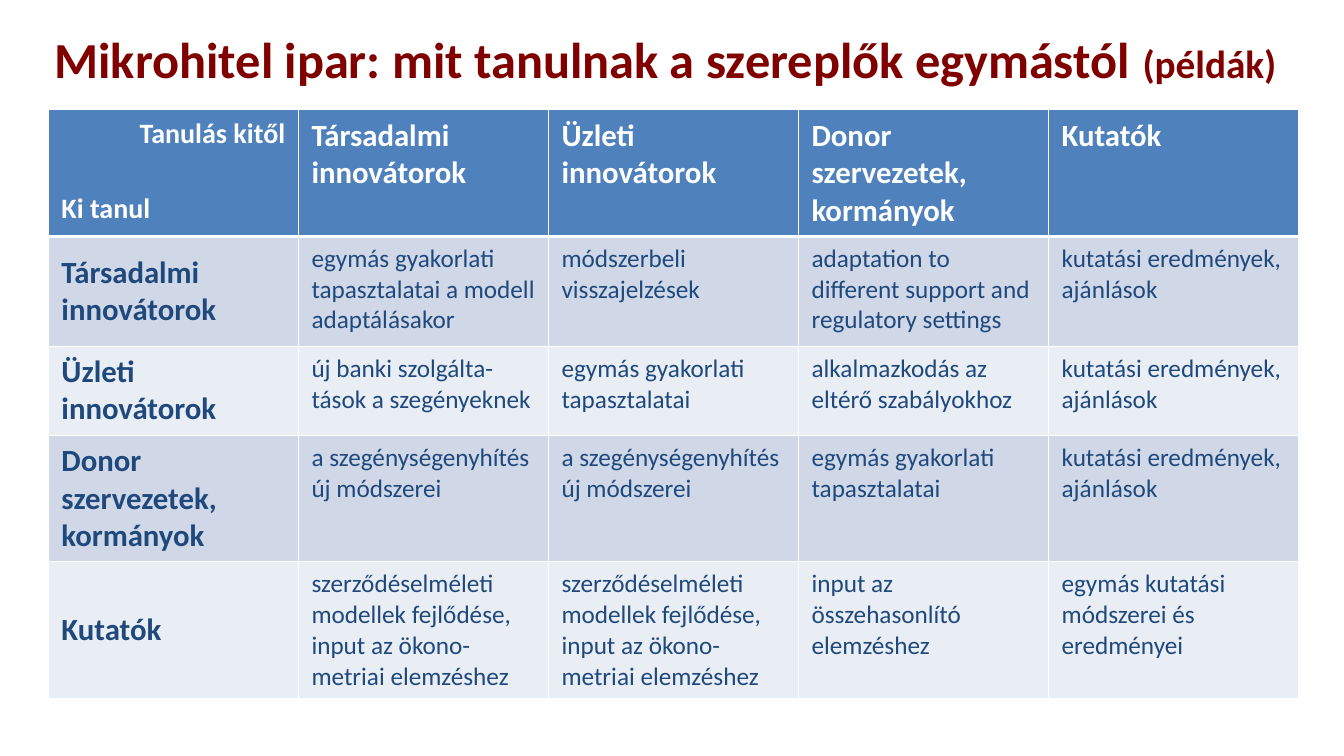
from dataclasses import dataclass

from pptx import Presentation
from pptx.dml.color import RGBColor
from pptx.enum.text import MSO_ANCHOR as Anchor, MSO_AUTO_SIZE as AutoSize, PP_ALIGN as Align
from pptx.oxml.ns import qn
from pptx.util import Inches, Pt
from lxml.etree import SubElement


@dataclass(frozen=True)
class Theme:
    font: str = "Calibri"
    title: str = "800000"
    header: str = "4F81BD"
    bands: tuple[str, str] = ("D0D8E8", "E9EDF4")
    text: str = "1F497D"
    white: str = "FFFFFF"
    title_size: int = 36
    note_size: int = 28
    heading_size: int = 22
    corner_size: int = 20
    body_size: int = 18


@dataclass(frozen=True)
class Learner:
    name: str
    height: float
    lessons: tuple[str, str, str, str]


THEME = Theme()
TABLE_LEFT, TABLE_TOP = 0.48, 1.09
COL_WIDTH, HEADER_HEIGHT = 2.48, 1.23
RESULTS = "kutatási eredmények, ajánlások"
PRACTICE = "egymás gyakorlati tapasztalatai"
POVERTY = "a szegénységenyhítés új módszerei"
THEORY = "szerződéselméleti modellek fejlődése, input az ökono-metriai elemzéshez"
LEARNERS = [
    Learner("Társadalmi innovátorok", 1.09, (
        "egymás gyakorlati tapasztalatai a modell adaptálásakor",
        "módszerbeli visszajelzések",
        "adaptation to different support and regulatory settings",
        RESULTS)),
    Learner("Üzleti innovátorok", 0.88, (
        "új banki szolgálta-tások a szegényeknek",
        PRACTICE, "alkalmazkodás az eltérő szabályokhoz", RESULTS)),
    Learner("Donor szervezetek, kormányok", 1.24, (POVERTY, POVERTY, PRACTICE, RESULTS)),
    Learner("Kutatók", 1.33, (
        THEORY, THEORY, "input az összehasonlító elemzéshez",
        "egymás kutatási módszerei és eredményei")),
]


def add_text(p, text: str, *, size: int, color: str, bold: bool = False,
             align: Align = Align.LEFT) -> None:
    p.alignment = align
    r = p.add_run()
    r.text = text
    r.font.name = THEME.font
    r.font.size = Pt(size)
    r.font.bold = bold
    r.font.color.rgb = RGBColor.from_string(color)


def set_borders(cell, **widths: float) -> None:
    """Draw white borders; widths in points for L, R, T and B."""
    tc_pr = cell._tc.get_or_add_tcPr()
    for side in "LRTB":
        ln = SubElement(tc_pr, qn(f"a:ln{side}"), w=str(Pt(widths.get(side, 1))))
        fill = SubElement(ln, qn("a:solidFill"))
        SubElement(fill, qn("a:srgbClr"), val=THEME.white)


def format_cell(cell, fill: str, anchor: Anchor = Anchor.TOP, **widths: float):
    """Style a cell and return its first paragraph."""
    cell.margin_left = cell.margin_right = Inches(0.13)
    cell.margin_top = cell.margin_bottom = Inches(0.07)
    cell.vertical_anchor = anchor
    set_borders(cell, **widths)
    cell.fill.solid()
    cell.fill.fore_color.rgb = RGBColor.from_string(fill)
    return cell.text_frame.paragraphs[0]


def add_title(s) -> None:
    title = s.shapes.title
    title.left, title.top = Inches(0.44), Inches(0.32)
    title.width, title.height = Inches(12.89), Inches(0.59)
    tf = title.text_frame
    tf.auto_size = AutoSize.NONE
    tf.vertical_anchor = Anchor.MIDDLE
    p = tf.paragraphs[0]
    p.line_spacing = 0.9
    add_text(p, "Mikrohitel ipar: mit tanulnak a szereplők egymástól ",
             size=THEME.title_size, color=THEME.title, bold=True)
    add_text(p, "(példák)", size=THEME.note_size, color=THEME.title, bold=True)


def fill_header(table) -> None:
    corner = table.cell(0, 0)
    p = format_cell(corner, THEME.header, B=3)
    add_text(p, "Tanulás kitől", size=THEME.corner_size, color=THEME.white,
             bold=True, align=Align.RIGHT)
    p = corner.text_frame.add_paragraph()
    p.space_before = Pt(29)
    add_text(p, "Ki tanul", size=THEME.corner_size, color=THEME.white, bold=True)
    for col, learner in enumerate(LEARNERS, 1):
        p = format_cell(table.cell(0, col), THEME.header, B=3)
        add_text(p, learner.name, size=THEME.heading_size, color=THEME.white, bold=True)


def fill_row(table, row: int, learner: Learner) -> None:
    band = THEME.bands[(row - 1) % 2]
    top = 3 if row == 1 else 1
    table.rows[row].height = Inches(learner.height)
    p = format_cell(table.cell(row, 0), band, Anchor.MIDDLE, T=top)
    add_text(p, learner.name, size=THEME.heading_size, color=THEME.text, bold=True)
    for col, lesson in enumerate(learner.lessons, 1):
        p = format_cell(table.cell(row, col), band, T=top)
        add_text(p, lesson, size=THEME.body_size, color=THEME.text)


def add_learning_table(s) -> None:
    count = len(LEARNERS) + 1
    height = HEADER_HEIGHT + sum(learner.height for learner in LEARNERS)
    table = s.shapes.add_table(count, count, Inches(TABLE_LEFT), Inches(TABLE_TOP),
                               Inches(COL_WIDTH * count), Inches(height)).table
    for column in table.columns:
        column.width = Inches(COL_WIDTH)
    table.rows[0].height = Inches(HEADER_HEIGHT)
    fill_header(table)
    for row, learner in enumerate(LEARNERS, 1):
        fill_row(table, row, learner)


def main() -> None:
    prs = Presentation()
    prs.slide_width, prs.slide_height = Inches(13.33), Inches(7.5)
    s = prs.slides.add_slide(prs.slide_layouts.get_by_name("Title Only"))
    add_title(s)
    add_learning_table(s)
    prs.save("out.pptx")


if __name__ == "__main__":
    main()
